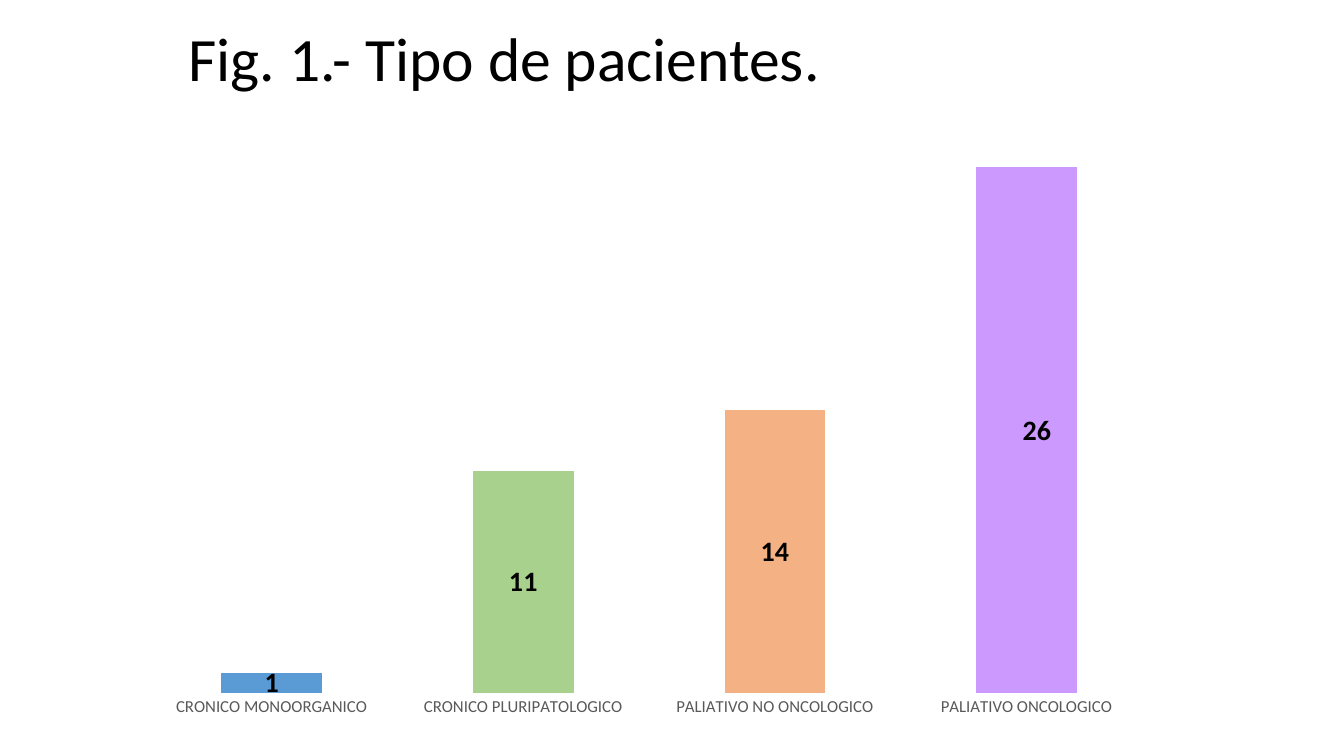
from lxml.etree import SubElement
from pptx import Presentation
from pptx.chart.data import CategoryChartData
from pptx.dml.color import RGBColor
from pptx.enum.chart import XL_CHART_TYPE, XL_TICK_MARK
from pptx.enum.text import MSO_AUTO_SIZE
from pptx.oxml.ns import qn
from pptx.util import Cm, Pt

FONT = "Calibri"
GROUPS = [
    ("CRONICO MONOORGANICO", 1, "5B9BD5"),
    ("CRONICO PLURIPATOLOGICO", 11, "A9D18E"),
    ("PALIATIVO NO ONCOLOGICO", 14, "F4B183"),
    ("PALIATIVO ONCOLOGICO", 26, "CC99FF"),
]


def color(code):
    return RGBColor.from_string(code)


def style(font, size, code="000000", bold=False):
    font.name = FONT
    font.size = Pt(size)
    font.bold = bold
    font.color.rgb = color(code)


def add_text(slide, text, box, **form):
    shape = slide.shapes.add_textbox(*map(Cm, box))
    frame = shape.text_frame
    frame.word_wrap = False
    frame.auto_size = MSO_AUTO_SIZE.SHAPE_TO_FIT_TEXT
    run = frame.paragraphs[0].add_run()
    run.text = text
    style(run.font, **form)


def set_layout(node, **parts):
    layout = node.find(qn("c:layout"))
    if layout is None:
        layout = SubElement(node, qn("c:layout"))
        node.insert(1 if node.tag == qn("c:dLbl") else 0, layout)
    manual = SubElement(layout, qn("c:manualLayout"))
    for tag, value in parts.items():
        SubElement(manual, qn("c:" + tag)).set("val", str(value))


def add_bars(slide, box):
    data = CategoryChartData(number_format="###0")
    data.categories = [name for name, _, _ in GROUPS]
    data.add_series("Series 1", [count for _, count, _ in GROUPS])
    chart = slide.shapes.add_chart(
        XL_CHART_TYPE.COLUMN_STACKED, *map(Cm, box), data
    ).chart
    chart.has_title = False
    chart.has_legend = False
    style(chart.font, 10)

    names = chart.category_axis
    names.major_tick_mark = XL_TICK_MARK.NONE
    names.format.line.fill.background()
    style(names.tick_labels.font, 12, "595959")
    scale = chart.value_axis
    scale.visible = False
    scale.has_major_gridlines = False
    scale.minimum_scale, scale.maximum_scale = 0, 30

    plot = chart.plots[0]
    plot.vary_by_categories = False
    plot.gap_width, plot.overlap = 150, 100
    bars = plot.series[0]
    for index, (_, _, code) in enumerate(GROUPS):
        fill = bars.points[index].format.fill
        fill.solid()
        fill.fore_color.rgb = color(code)

    labels = bars.data_labels
    labels.show_value = True
    labels.number_format = "###0"
    labels.number_format_is_linked = False
    style(labels.font, 20, bold=True)
    style(bars.points[3].data_label.font, 20, bold=True)
    set_layout(bars._element.find(".//" + qn("c:dLbl")), x=0.01, y=0)
    set_layout(
        plot._element.getparent(), layoutTarget="inner", xMode="edge",
        yMode="edge", x=0.02, y=0.02, w=0.96, h=0.92,
    )


def add_figure(slide, box):
    left, top, width, height = box
    add_bars(slide, (left, top + 1.47, width, height - 1.47))
    add_text(slide, "Fig. 1.- Tipo de pacientes.",
             (left + 1.35, top, 16.69, 2.13), size=44)


def main():
    deck = Presentation()
    deck.slide_width, deck.slide_height = Cm(33.87), Cm(19.05)
    slide = deck.slides.add_slide(deck.slide_layouts[6])
    add_figure(slide, (3.15, 0.38, 26.42, 18.08))
    deck.save("out.pptx")


if __name__ == "__main__":
    main()
